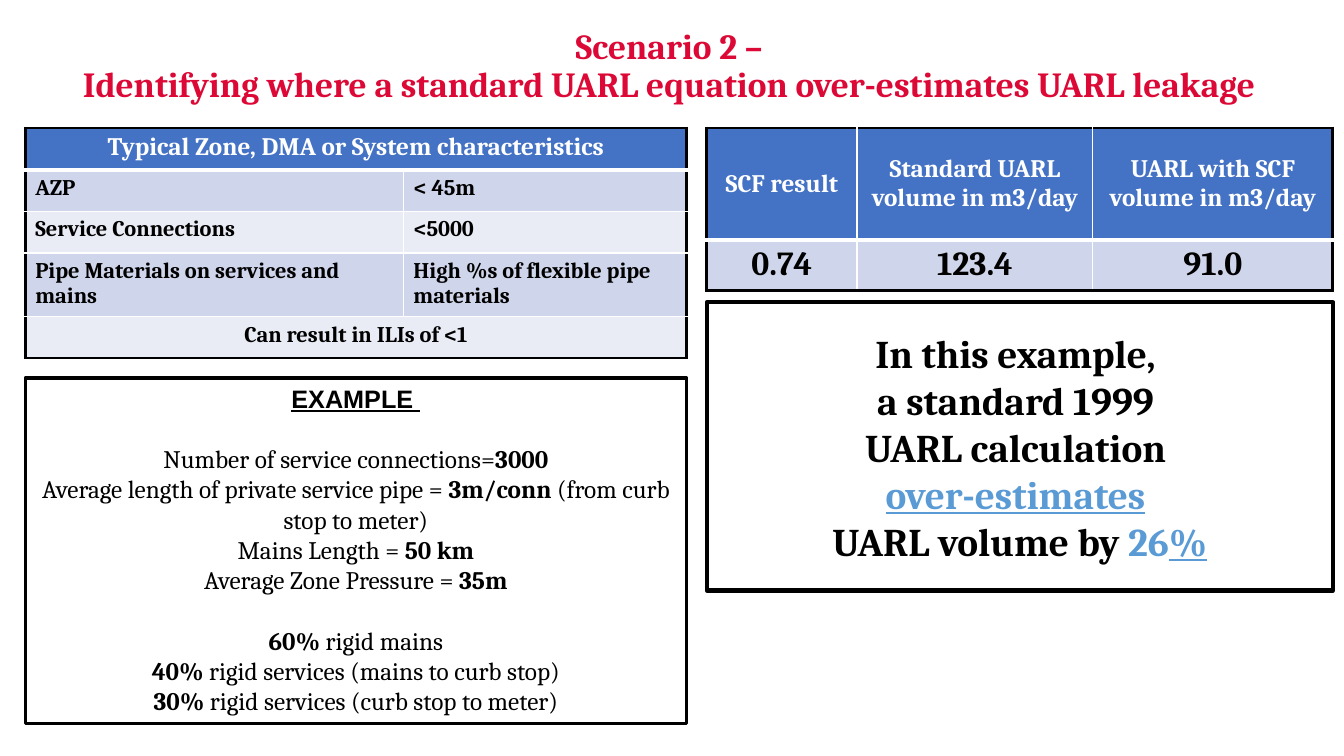
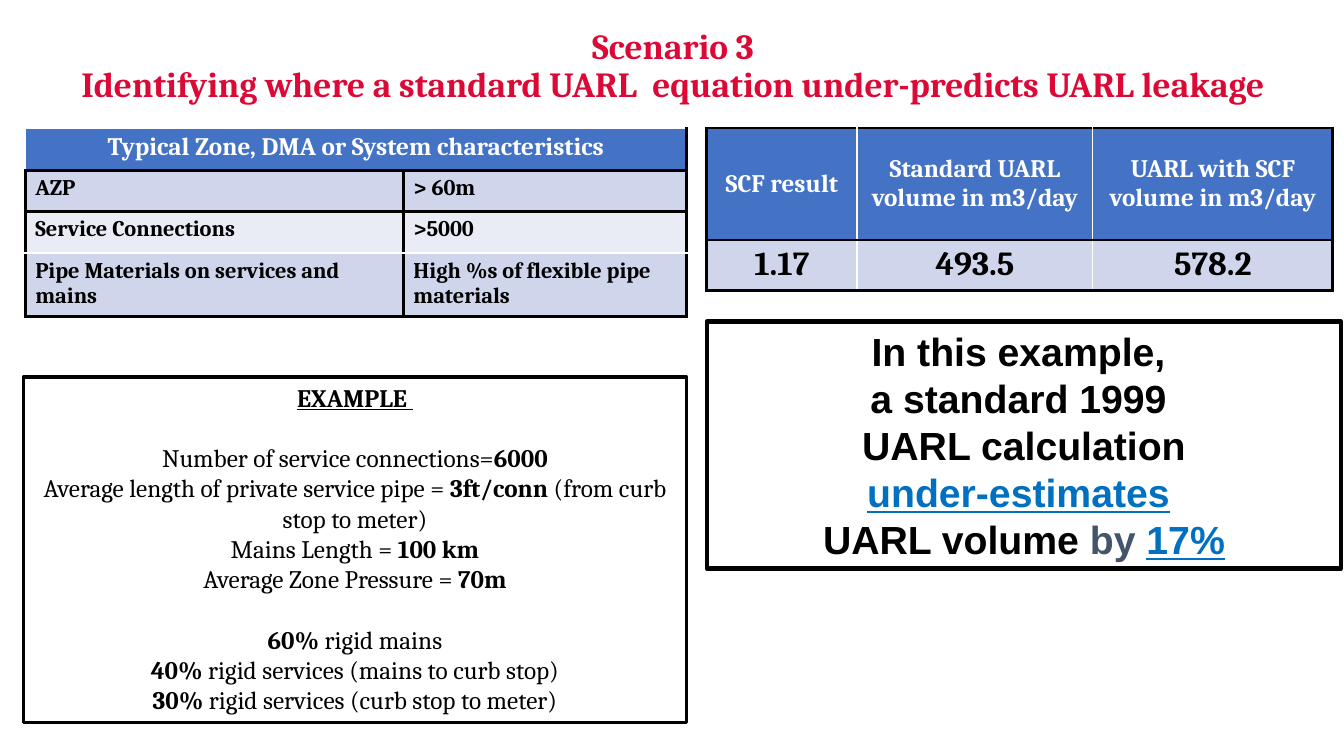
from lxml import etree
from pptx import Presentation
from pptx import util as u
from pptx.dml.color import RGBColor
from pptx.enum import shapes, text
from pptx.oxml.ns import qn

rgb = RGBColor.from_string
RED, BLACK, WHITE = "DC0936", "000000", "FFFFFF"
BLUE, BAND_DARK, BAND_LIGHT = "4472C4", "CFD5EA", "E9EBF5"
SKY, OCEAN, SLATE = "5B9BD5", "0070C0", "44546A"
SERIF, SANS = "Cambria", "Arial"
CENTER, LEFT = text.PP_ALIGN.CENTER, text.PP_ALIGN.LEFT
TOP, MIDDLE = text.MSO_ANCHOR.TOP, text.MSO_ANCHOR.MIDDLE

# Rules of the tables: colour and points
OUTER, THIN, HEAD = (BLACK, 2.25), (WHITE, 1), (WHITE, 3)

# Page grid in inches: two columns below the title
COL_1, COL_2, TABLE_TOP = 0.25, 7.01, 1.27
TRAITS_COLS, RESULT_COLS = (3.75, 2.81), (1.49, 2.34, 2.38)
TRAITS_ROWS, RESULT_ROWS = (0.42, 0.41, 0.41, 0.63, 0.41), (1.11, 0.5)


def add_run(p, words, size, color=BLACK, font=SERIF, bold=True, underline=False):
    r = p.add_run()
    r.text = words
    r.font.size, r.font.name = u.Pt(size), font
    r.font.bold, r.font.underline = bold, underline
    r.font.color.rgb = rgb(color)


def add_ruled_table(s, left, cols, heights, rows, size, across, down, centred):
    """Table with a blue header; a row with a single text spans all columns.

    across lists the horizontal rules from the top, down is the inner vertical rule.
    """
    frame = s.shapes.add_table(len(rows), len(cols), u.Inches(left), u.Inches(TABLE_TOP),
                               u.Inches(sum(cols)), u.Inches(sum(heights[:len(rows)])))
    table = frame.table
    for column, width in zip(table.columns, cols):
        column.width = u.Inches(width)
    for i, row in enumerate(rows):
        table.rows[i].height = u.Inches(heights[i])
        span = len(row) == 1
        if span:
            table.cell(i, 0).merge(table.cell(i, len(cols) - 1))
        for j in range(len(cols)):
            cell = table.cell(i, j)
            first, last = j == 0, j == len(cols) - 1
            edge = across[0] if i == 0 else OUTER
            rules = {"a:lnL": edge if first else None if span else down,
                     "a:lnR": OUTER if last or span else down,
                     "a:lnT": across[i], "a:lnB": across[i + 1]}
            tc_pr = cell._tc.get_or_add_tcPr()
            for tag, rule in rules.items():
                if rule:
                    ln = etree.SubElement(tc_pr, qn(tag), w=str(u.Pt(rule[1])))
                    fill = etree.SubElement(ln, qn("a:solidFill"))
                    etree.SubElement(fill, qn("a:srgbClr"), val=rule[0])
            cell.fill.solid()
            cell.fill.fore_color.rgb = rgb(BLUE if i == 0 else BAND_DARK if i % 2 else BAND_LIGHT)
            if j < len(row):
                p = cell.text_frame.paragraphs[0]
                p.alignment = CENTER if centred or span else LEFT
                cell.vertical_anchor = MIDDLE if centred and i == 0 else TOP
                add_run(p, row[j], 18 if i == 0 else size, BLACK if i else WHITE)


scenarios = [
    dict(title=("Scenario 2 – ",
                "Identifying where a standard UARL equation over-estimates UARL leakage "),
         limits=("< 45m", "<5000"), closing=[["Can result in ILIs of <1"]],
         across=[OUTER, HEAD, THIN, THIN, THIN, OUTER], down=THIN, result_rule=HEAD,
         result=("0.74", "123.4", "91.0"),
         example_at=(COL_1, 3.75, 6.56, 3.43), heading_font=SANS,
         facts=("3000", "3m/conn", "50 km", "35m"),
         verdict_at=(COL_2, 3, 6.21, 2.86), verdict_font=SERIF,
         verdict=[[("UARL calculation ", BLACK, False)],
                  [("over-estimates", SKY, True), (" ", SKY, False)],
                  [("UARL volume by ", BLACK, False), ("26", SKY, False), ("%", SKY, True)]]),
    dict(title=("Scenario 3",
                "Identifying where a standard UARL  equation under-predicts UARL leakage"),
         limits=("> 60m", ">5000"), closing=[],
         across=[THIN, OUTER, OUTER, THIN, OUTER], down=OUTER, result_rule=OUTER,
         result=("1.17", "493.5", "578.2"),
         example_at=(0.23, 3.74, 6.58, 3.43), heading_font=SERIF,
         facts=("6000", "3ft/conn", "100 km", "70m"),
         verdict_at=(COL_2, 3.19, 6.29, 2.45), verdict_font=SANS,
         verdict=[[("UARL calculation", BLACK, False)],
                  [("under-estimates", OCEAN, True), (" ", SLATE, False)],
                  [("UARL volume ", BLACK, False), ("by ", SLATE, False), ("17%", OCEAN, True)]]),
]
opening = [[("In this example, ", BLACK, False)], [("a standard 1999 ", BLACK, False)]]

prs = Presentation()
prs.slide_width, prs.slide_height = u.Inches(13.33), u.Inches(7.5)

for sc in scenarios:
    s = prs.slides.add_slide(prs.slide_layouts[6])

    # Title
    sp = s.shapes.add_textbox(*map(u.Inches, (COL_1, 0.24, 12.85, 0.71)))
    sp.text_frame.word_wrap = True
    p = sp.text_frame.paragraphs[0]
    p.alignment, p.line_spacing = CENTER, 0.9
    add_run(p, sc["title"][0], 25.2, RED)
    p.add_line_break()
    add_run(p, sc["title"][1], 25.2, RED)

    # Tables
    traits = [["Typical Zone, DMA or System characteristics"],
              ["AZP", sc["limits"][0]],
              ["Service Connections", sc["limits"][1]],
              ["Pipe Materials on services and mains", "High %s of flexible pipe materials"],
              *sc["closing"]]
    add_ruled_table(s, COL_1, TRAITS_COLS, TRAITS_ROWS, traits, 16,
                    sc["across"], sc["down"], False)
    results = [["SCF result", "Standard UARL volume in m3/day", "UARL with SCF volume in m3/day"],
               sc["result"]]
    add_ruled_table(s, COL_2, RESULT_COLS, RESULT_ROWS, results, 24,
                    [OUTER, sc["result_rule"], OUTER], THIN, True)

    # Framed boxes
    frames = []
    for at, weight, anchor in ((sc["example_at"], 2.25, TOP), (sc["verdict_at"], 3, MIDDLE)):
        sp = s.shapes.add_shape(shapes.MSO_SHAPE.RECTANGLE, *map(u.Inches, at))
        sp.shadow.inherit = False
        sp.fill.background()
        sp.line.color.rgb, sp.line.width = rgb(BLACK), u.Pt(weight)
        tf = sp.text_frame
        tf.word_wrap, tf.vertical_anchor = True, anchor
        frames.append(tf)
    example, verdict = frames

    # Example: words between asterisks are bold
    p = example.paragraphs[0]
    p.alignment = CENTER
    add_run(p, "EXAMPLE ", 18, font=sc["heading_font"], underline=True)
    connections, pipe, mains, pressure = sc["facts"]
    groups = [[f"Number of service connections=*{connections}*",
               f"Average length of private service pipe = *{pipe} *(from curb stop to meter)",
               f"Mains Length = *{mains}*",
               f"Average Zone Pressure = *{pressure}*"],
              ["*60%* rigid mains",
               "*40%* rigid services (mains to curb stop)",
               "*30%* rigid services (curb stop to meter)"]]
    for group in groups:
        for i, line in enumerate(group):
            p = example.add_paragraph()
            p.alignment, p.space_before = CENTER, u.Pt(0 if i else 21.6)
            for k, words in enumerate(line.split("*")):
                if words:
                    add_run(p, words, 18, bold=k % 2 == 1)

    # Verdict
    for i, line in enumerate(opening + sc["verdict"]):
        p = verdict.add_paragraph() if i else verdict.paragraphs[0]
        p.alignment = CENTER
        for words, color, underline in line:
            add_run(p, words, 28, color, sc["verdict_font"], underline=underline)

prs.save("out.pptx")
